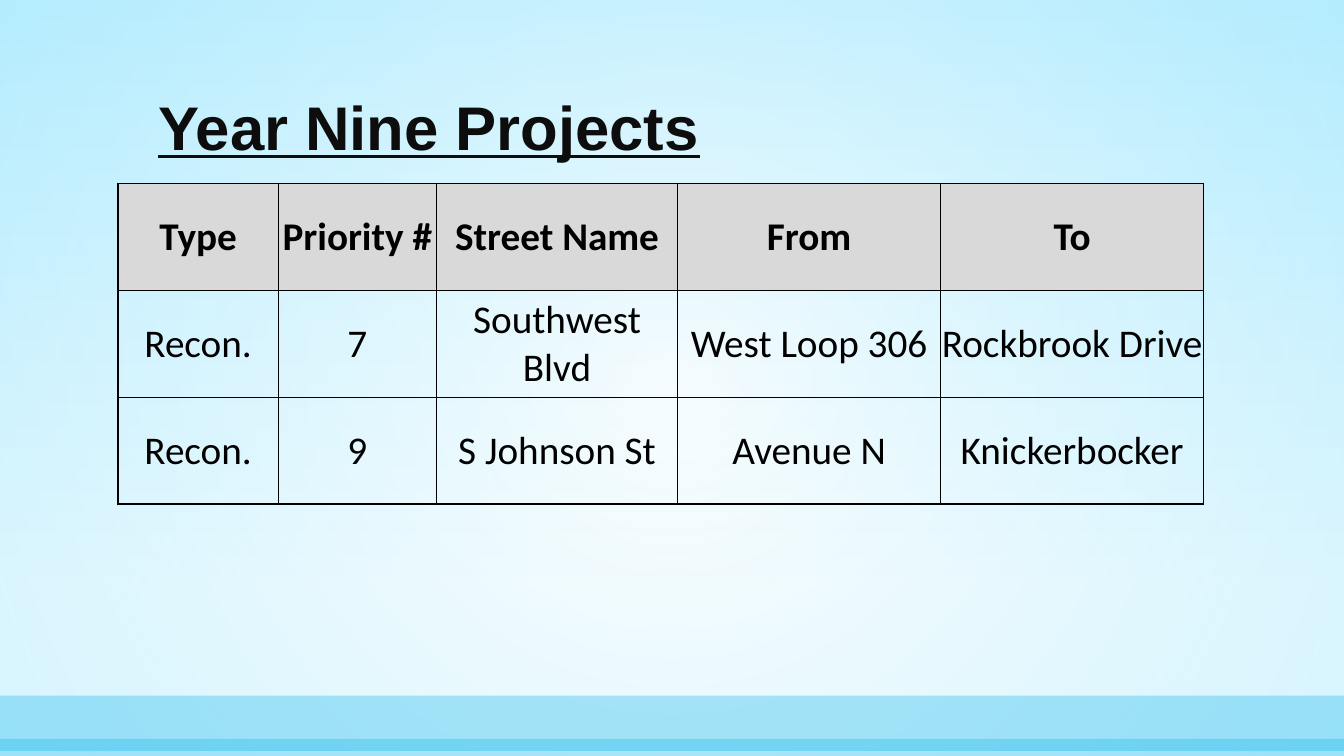
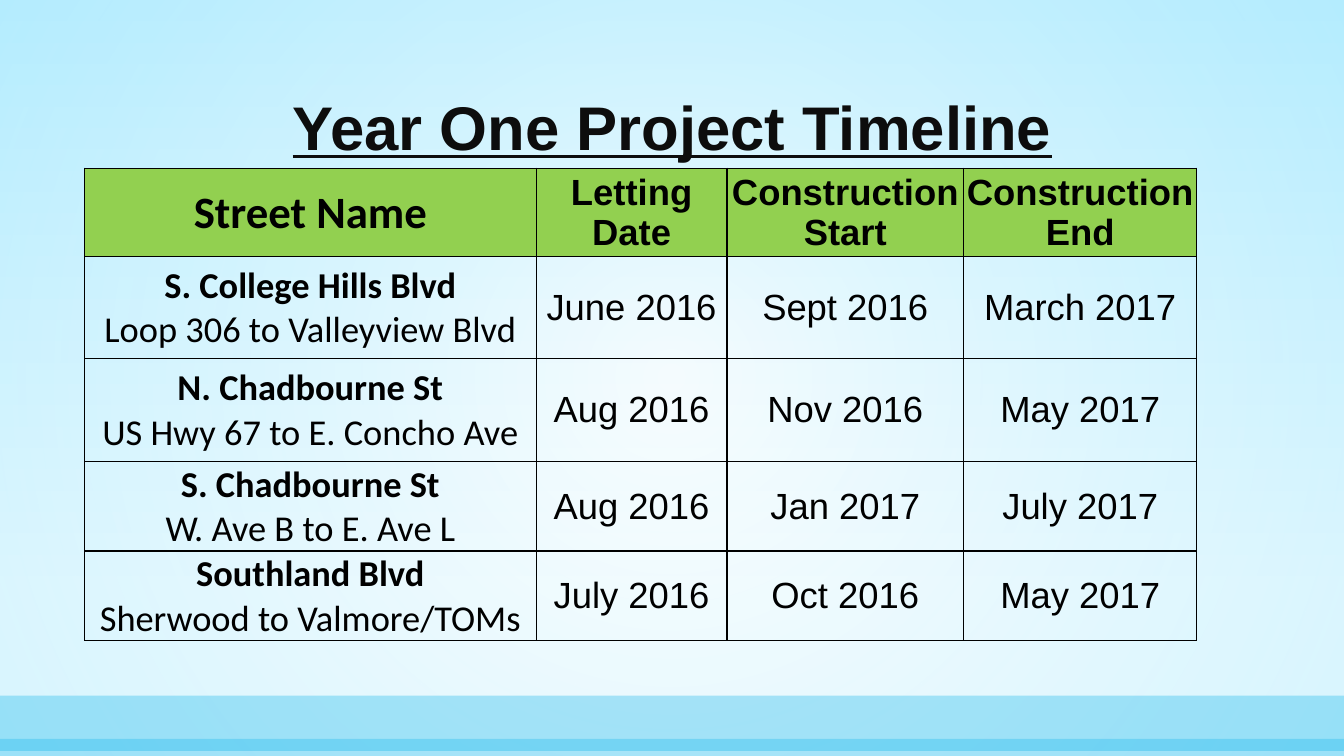
"""Build two street project slides with a shared backdrop, title style and table style."""
from lxml import etree
from pptx import Presentation
from pptx import util as u
from pptx.dml.color import RGBColor
from pptx.enum import shapes, text
from pptx.oxml import parse_xml
from pptx.oxml.ns import nsdecls, qn

BLACK, INK, BLUE, SKY = "000000", "0D0D0D", "00B0EA", "91E4FF"
WIDE, HIGH = 13.33, 7.5
MID, LEFT = text.PP_ALIGN.CENTER, text.PP_ALIGN.LEFT


def tint(color, code):
    color.rgb = RGBColor.from_string(code)


def write(frame, words, size, font, color=BLACK, bold=False, line=False, align=MID, space=None):
    for i, part in enumerate(words.split("\n")):
        para = frame.paragraphs[0] if i == 0 else frame.add_paragraph()
        para.alignment, para.line_spacing = align, space
        run = para.add_run()
        run.text = part
        run.font.size, run.font.name = u.Pt(size), font
        run.font.bold, run.font.underline = bold and i == 0, line
        tint(run.font.color, color)


bands = [
    (0, HIGH, ["FFFFFF", SKY], [49, 35]),
    (6.9, 0.55, [BLUE], [30]),
    (7.33, 0.17, [BLUE], [28]),
]
pages = [
    dict(title="Year Nine Projects", align=LEFT, at=(1.17, 1.82), head="D9D9D9",
         cols=[1.59, 1.57, 2.39, 2.61, 2.61], rows=[1.06] * 3,
         font="Calibri", size=28, lead=28,
         cells=[
             ["Type", "Priority #", "Street Name", "From", "To"],
             ["Recon.", "7", "Southwest Blvd", "West Loop 306", "Rockbrook Drive"],
             ["Recon.", "9", "S Johnson St", "Avenue N", "Knickerbocker"],
         ]),
    dict(title="Year One Project Timeline", align=MID, at=(0.84, 1.67), head="92D050",
         cols=[4.48, 1.89, 2.35, 2.31], rows=[0.81, 1.01, 1.02, 0.89, 0.89],
         font="Arial", size=26, lead=32,
         cells=[
             ["Street Name", "Letting Date", "Construction Start", "Construction End"],
             ["S. College Hills Blvd\nLoop 306 to Valleyview Blvd",
              "June 2016", "Sept 2016", "March 2017"],
             ["N. Chadbourne St\nUS Hwy 67 to E. Concho Ave",
              "Aug 2016", "Nov 2016", "May 2017"],
             ["S. Chadbourne St\nW. Ave B to E. Ave L",
              "Aug 2016", "Jan 2017", "July 2017"],
             ["Southland Blvd\nSherwood to Valmore/TOMs",
              "July 2016", "Oct 2016", "May 2017"],
         ]),
]

deck = Presentation()
deck.slide_width, deck.slide_height = u.Inches(WIDE), u.Inches(HIGH)

back = deck.slide_master.background.fill
back.gradient()
back.gradient_angle = 270
for stop, code, pos in zip(back.gradient_stops, ["C8F1FF", "FFFFFF"], [0, 0.79]):
    tint(stop.color, code)
    stop.position = pos

for page in pages:
    slide = deck.slides.add_slide(deck.slide_layouts[6])

    for top, tall, codes, alphas in bands:
        band = slide.shapes.add_shape(shapes.MSO_SHAPE.RECTANGLE, 0, u.Inches(top),
                                      u.Inches(WIDE), u.Inches(tall))
        band.shadow.inherit = False
        band.line.fill.background()
        props = band._element.spPr
        if len(codes) == 1:
            band.fill.solid()
            tint(band.fill.fore_color, codes[0])
        else:
            band.fill.gradient()
            for stop, code, pos in zip(band.fill.gradient_stops, codes, [0, 1]):
                tint(stop.color, code)
                stop.position = pos
            lin = props.find(".//" + qn("a:lin"))
            lin.getparent().replace(lin, parse_xml(
                f'<a:path {nsdecls("a")} path="circle">'
                '<a:fillToRect l="50000" t="50000" r="50000" b="50000"/></a:path>'))
        for clr, alpha in zip(props.iter(qn("a:srgbClr")), alphas):
            etree.SubElement(clr, qn("a:alpha")).set("val", str(alpha * 1000))

    box = slide.shapes.add_textbox(*map(u.Inches, (1.47, 0.48, 10.4, 1.19))).text_frame
    box.word_wrap = True
    box.vertical_anchor = text.MSO_ANCHOR.BOTTOM
    write(box, page["title"], 44, "Arial", INK, bold=True, line=True,
          align=page["align"], space=0.9)

    cols, rows = page["cols"], page["rows"]
    area = (*page["at"], sum(cols), sum(rows))
    table = slide.shapes.add_table(len(rows), len(cols), *map(u.Inches, area)).table
    table.first_row = table.horz_banding = False
    for col, wide in zip(table.columns, cols):
        col.width = u.Inches(wide)
    for r, (row, tall) in enumerate(zip(table.rows, rows)):
        row.height = u.Inches(tall)
        for c, (cell, words) in enumerate(zip(row.cells, page["cells"][r])):
            cell.vertical_anchor = text.MSO_ANCHOR.MIDDLE
            cell.margin_left = cell.margin_right = cell.margin_top = u.Inches(0.01)
            cell.margin_bottom = 0
            if r == 0:
                cell.fill.solid()
                tint(cell.fill.fore_color, page["head"])
            else:
                cell.fill.background()
            for i, side in enumerate("LRTB"):
                cell._tc.tcPr.insert(i, parse_xml(
                    f'<a:ln{side} {nsdecls("a")} w="12700"><a:solidFill>'
                    f'<a:srgbClr val="{BLACK}"/></a:solidFill></a:ln{side}>'))
            write(cell.text_frame, words, page["lead"] if r == c == 0 else page["size"],
                  "Calibri" if c == 0 else page["font"], bold=r == 0 or "\n" in words)

deck.save("out.pptx")
